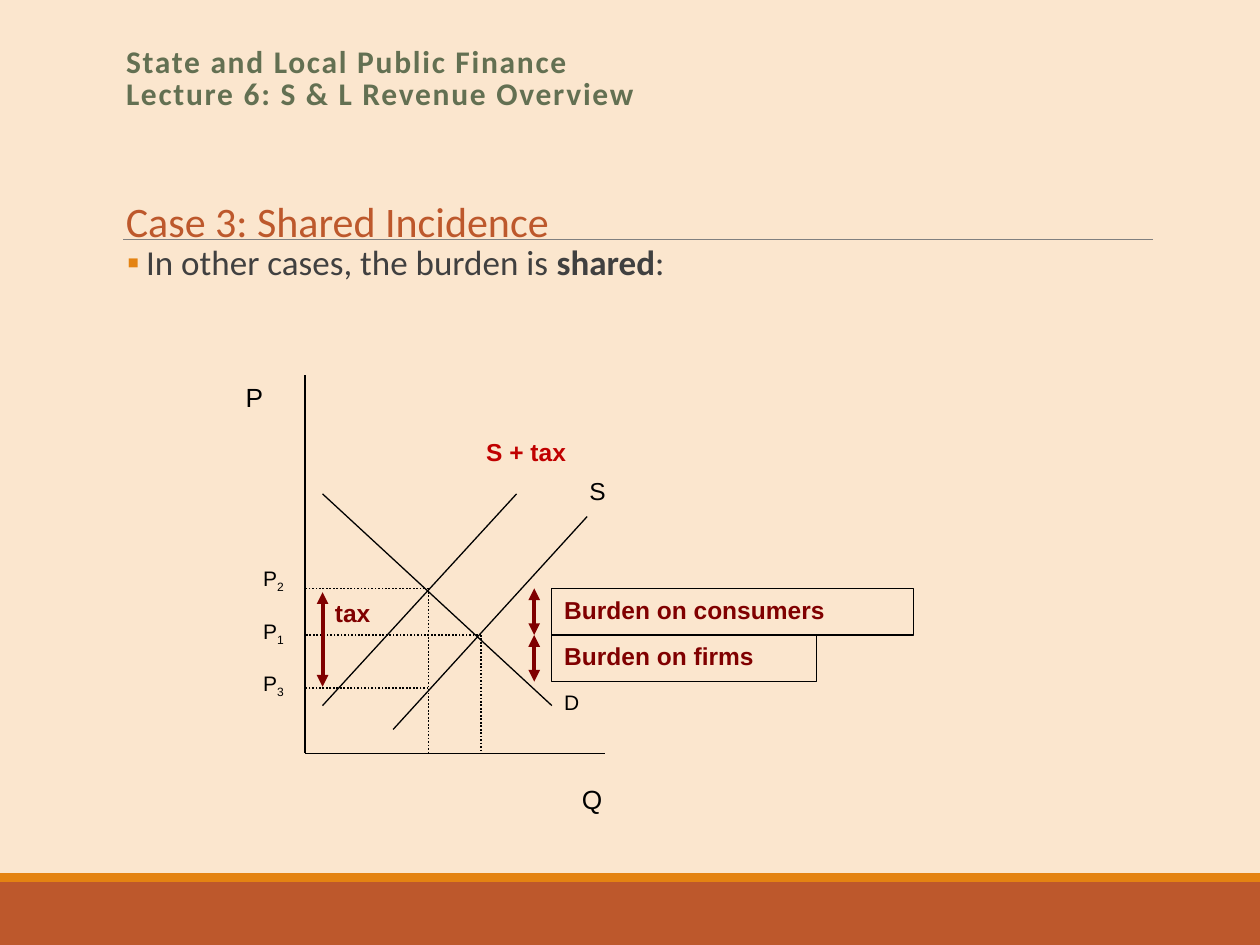
from dataclasses import dataclass

from pptx import Presentation
from pptx.dml.color import RGBColor
from pptx.enum.dml import MSO_LINE
from pptx.enum.shapes import MSO_CONNECTOR, MSO_SHAPE
from pptx.enum.text import MSO_ANCHOR, MSO_AUTO_SIZE, PP_ALIGN
from pptx.oxml.ns import qn
from pptx.oxml.xmlchemy import OxmlElement as Element
from pptx.slide import Slide
from pptx.util import Inches, Pt


def color(value):
    return RGBColor.from_string(value)


def add_text(paragraph, text, size=14, font="Arial", fill="000000",
             bold=False, baseline=None, tracking=None):
    run = paragraph.add_run()
    run.text = text
    run.font.size, run.font.name, run.font.bold = Pt(size), font, bold
    run.font.color.rgb = color(fill)
    properties = run.font._element
    if baseline:
        properties.set("baseline", str(baseline * 1000))
    if tracking:
        properties.set("spc", str(tracking * 100))


def add_child(parent, tag, **attributes):
    child = Element(tag)
    for name, value in attributes.items():
        child.set(name, value)
    parent.append(child)
    return child


@dataclass
class Deck:
    """Holds the palette and the slide being drawn."""
    slide: Slide
    background: str = "FBE6CE"
    rust: str = "BD582C"
    orange: str = "E48312"
    green: str = "637052"
    maroon: str = "800000"
    red: str = "C00000"
    gray: str = "404040"
    heading_font: str = "Calibri"

    def paint_background(self):
        fill = self.slide.background.fill
        fill.solid()
        fill.fore_color.rgb = color(self.background)

    def place(self, shape, left, top, width, height):
        shape.left, shape.top = Inches(left), Inches(top)
        shape.width, shape.height = Inches(width), Inches(height)
        frame = shape.text_frame
        frame.word_wrap, frame.auto_size = True, MSO_AUTO_SIZE.NONE
        frame.vertical_anchor = MSO_ANCHOR.TOP
        paragraph = frame.paragraphs[0]
        paragraph.alignment = PP_ALIGN.LEFT
        return paragraph

    def title(self, lines, *box):
        paragraph = self.place(self.slide.shapes.title, *box)
        paragraph.line_spacing = 0.85
        for index, line in enumerate(lines):
            if index:
                paragraph.add_line_break()
            add_text(paragraph, line, size=18, font=self.heading_font,
                     fill=self.green, bold=True, tracking=1)

    def bullet(self, parts, *box):
        body = self.slide.placeholders[1]
        paragraph = self.place(body, *box)
        body.text_frame.margin_left = body.text_frame.margin_right = 0
        paragraph.line_spacing = 0.9
        paragraph.space_before = Pt(0)
        properties = paragraph._p.get_or_add_pPr()
        properties.set("marL", str(Inches(0.15)))
        properties.set("indent", str(Inches(-0.15)))
        bullet_color = add_child(properties, "a:buClr")
        add_child(bullet_color, "a:srgbClr", val=self.orange)
        add_child(properties, "a:buFont", typeface=self.heading_font)
        add_child(properties, "a:buChar", char="▪")
        for text, bold in parts:
            add_text(paragraph, text, size=20, font=self.heading_font,
                     fill=self.gray, bold=bold)

    def label(self, text, *box, subscript=None, wrap=True, **style):
        shape = self.slide.shapes.add_textbox(0, 0, 0, 0)
        paragraph = self.place(shape, *box)
        shape.text_frame.word_wrap = wrap
        add_text(paragraph, text, **style)
        if subscript:
            add_text(paragraph, subscript, baseline=-25, **style)

    def rectangle(self, *box, fill, text=None, line=None):
        shape = self.slide.shapes.add_shape(MSO_SHAPE.RECTANGLE, 0, 0, 0, 0)
        paragraph = self.place(shape, *box)
        shape.shadow.inherit = False
        shape.fill.solid()
        shape.fill.fore_color.rgb = color(fill)
        if line:
            shape.line.color.rgb = color(line)
            shape.line.width = Pt(0.75)
        else:
            shape.line.fill.background()
        if text:
            add_text(paragraph, text, fill=self.maroon, bold=True)

    def line(self, x1, y1, x2, y2, fill="000000", width=0.75, dash=None):
        connector = self.slide.shapes.add_connector(
            MSO_CONNECTOR.STRAIGHT, *map(Inches, (x1, y1, x2, y2)))
        connector.line.color.rgb = color(fill)
        connector.line.width = Pt(width)
        if dash:
            connector.line.dash_style = dash
        add_child(connector._element.spPr, "a:effectLst")
        return connector

    def guide(self, *ends):
        self.line(*ends, width=1, dash=MSO_LINE.ROUND_DOT)

    def double_arrow(self, x, top, bottom):
        connector = self.line(x, top, x, bottom, fill=self.maroon, width=2.25)
        outline = connector._element.spPr.find(qn("a:ln"))
        for end in ("a:headEnd", "a:tailEnd"):
            add_child(outline, end, type="triangle")


def main():
    presentation = Presentation()
    presentation.slide_width, presentation.slide_height = Inches(10), Inches(7.5)
    deck = Deck(presentation.slides.add_slide(presentation.slide_layouts[1]))
    deck.paint_background()
    deck.rectangle(0, 7, 10, 0.5, fill=deck.rust)
    deck.rectangle(0, 6.93, 10, 0.07, fill=deck.orange)
    deck.line(0.98, 1.9, 9.15, 1.9, fill="808080", width=0.5)

    deck.title(["State and Local Public Finance",
                "Lecture 6: S & L Revenue Overview"], 0.9, 0.33, 8.25, 0.65)
    deck.label("Case 3: Shared Incidence", 0.9, 1.5, 3.65, 0.5, wrap=False,
               size=24, font=deck.heading_font, fill=deck.rust)
    deck.bullet([("In other cases, the burden is ", False), ("shared", True),
                 (":", False)], 1.01, 1.9, 5.06, 0.4)

    axis_x, axis_y = 2.42, 5.98
    taxed_quantity, free_quantity = 3.4, 3.82
    consumer_price, free_price, firm_price = 4.67, 5.04, 5.46

    deck.line(axis_x, 2.98, axis_x, axis_y)
    deck.line(axis_x, axis_y, 4.8, axis_y)
    deck.line(2.56, 3.92, 4.38, 5.6)
    deck.line(2.56, 5.6, 4.1, 3.92)
    deck.line(3.12, 5.79, 4.66, 4.1)

    for quantity, price in ((taxed_quantity, consumer_price),
                            (free_quantity, free_price),
                            (taxed_quantity, firm_price)):
        deck.guide(quantity, price, axis_x, price)
    for quantity, price in ((taxed_quantity, consumer_price),
                            (free_quantity, free_price)):
        deck.guide(quantity, price, quantity, axis_y)

    deck.label("P", 1.85, 2.98, 0.42, 0.75, size=15)
    deck.label("Q", 4.52, 6.17, 0.42, 0.75, size=15)
    deck.label("S", 4.58, 3.73, 0.64, 0.56)
    deck.label("S + tax", 3.76, 3.42, 0.98, 0.56, fill=deck.red, bold=True)
    deck.label("D", 4.38, 5.42, 0.7, 0.56, size=12)
    for number, top in (("2", 4.44), ("1", 4.86), ("3", 5.27)):
        deck.label("P", 1.99, top, 0.56, 0.56, subscript=number, size=12)

    deck.double_arrow(2.56, 4.7, 5.45)
    deck.label("tax", 2.56, 4.7, 0.56, 0.68, fill=deck.maroon, bold=True)
    share = free_price - consumer_price
    for text, top, width in (("Burden on consumers", consumer_price, 2.87),
                             ("Burden on firms", free_price, 2.1)):
        deck.rectangle(4.38, top, width, share, text=text,
                       fill=deck.background, line="000000")
        deck.double_arrow(4.24, top, top + share)

    presentation.save("out.pptx")


if __name__ == "__main__":
    main()
